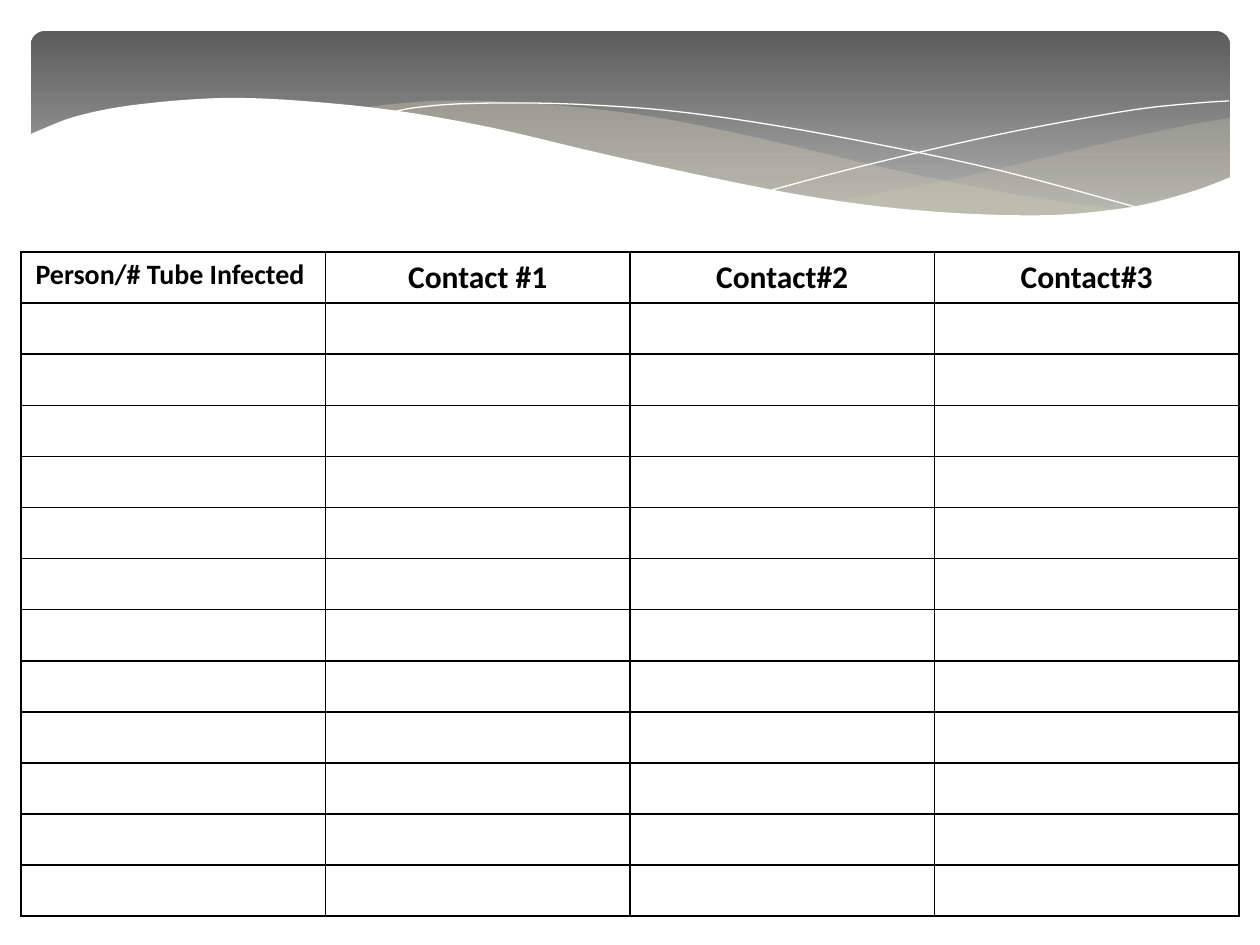
import dataclasses

import lxml.etree
import pptx
import pptx.dml.color
import pptx.enum.shapes
import pptx.enum.text
import pptx.oxml.ns
import pptx.util

EMU_PER_PX = 914400 / 126


@dataclasses.dataclass(frozen=True)
class Theme:
    font: str = "Calibri"
    text: str = "000000"
    border: str = "000000"
    paper: str = "FFFFFF"
    banner_top: str = "5C5C5C"
    banner_bottom: str = "AFAFAF"
    wave: str = "C8C8B1"
    first_header_size: int = 16
    header_size: int = 18
    border_width: int = 1


THEME = Theme()

HEADERS = ["Person/# Tube Infected ", "Contact #1", "Contact#2", "Contact#3"]
EMPTY_ROWS = 12

RIGHT_WAVE_TOP = [(833, 202), (890, 191), (949, 180), (1014, 165), (1085, 148),
                  (1123, 139), (1160, 131), (1194, 124), (1230, 118)]
RIGHT_WAVE_BOTTOM = [(1230, 178), (1196, 191), (1160, 202), (1120, 209), (1076, 214),
                     (1026, 217), (969, 215), (906, 210), (833, 202)]
LONG_WAVE_TOP = [(360, 108), (394, 104), (433, 101), (479, 101), (529, 103),
                 (586, 108), (648, 116), (717, 129), (793, 146), (890, 169),
                 (976, 187), (1055, 201), (1125, 210)]
LONG_WAVE_BOTTOM = [(1125, 210), (1080, 216), (1031, 218), (974, 217), (910, 212),
                    (838, 203), (757, 189), (668, 170), (566, 146), (483, 127),
                    (407, 114), (360, 108)]
FALLING_LINE = [(389, 113), (413, 108), (457, 104), (524, 103), (591, 105),
                (672, 111), (766, 124), (876, 144), (1002, 171), (1143, 209)]
RISING_LINE = [(772, 190), (847, 170), (942, 147), (1016, 131), (1091, 117),
               (1147, 108), (1198, 103), (1229, 101)]
PAPER_EDGE = [(29, 135), (45, 128), (74, 117), (120, 107), (184, 100), (243, 98),
              (315, 102), (398, 111), (493, 128), (599, 153), (699, 175), (789, 193),
              (867, 205), (938, 212), (1000, 215), (1055, 215), (1103, 211),
              (1147, 204), (1197, 190), (1231, 177)]


def px(n):
    return round(n * EMU_PER_PX)


def rgb(color):
    return pptx.dml.color.RGBColor.from_string(color)


def smooth_curve(points, steps=5):
    """Return points along a Catmull-Rom spline through the given points."""
    padded = [points[0], *points, points[-1]]
    curve = [points[0]]
    for a, b, c, d in zip(padded, padded[1:], padded[2:], padded[3:]):
        for step in range(1, steps + 1):
            t = step / steps
            curve.append(tuple(
                (2 * q + (r - p) * t + (2 * p - 5 * q + 4 * r - s) * t ** 2
                 + (3 * q - p - 3 * r + s) * t ** 3) / 2
                for p, q, r, s in zip(a, b, c, d)))
    return curve


def add_outline(slide, points, closed):
    emu = [(px(x), px(y)) for x, y in points]
    builder = slide.shapes.build_freeform(*emu[0])
    builder.add_line_segments(emu[1:], close=closed)
    sp = builder.convert_to_shape()
    sp.shadow.inherit = False
    return sp


def add_area(slide, points, color, opacity=100):
    sp = add_outline(slide, points, closed=True)
    sp.line.fill.background()
    sp.fill.solid()
    sp.fill.fore_color.rgb = rgb(color)
    if opacity < 100:
        clr = sp.fill._xPr.find(".//" + pptx.oxml.ns.qn("a:srgbClr"))
        lxml.etree.SubElement(clr, pptx.oxml.ns.qn("a:alpha"), val=str(opacity * 1000))


def add_hairline(slide, points):
    sp = add_outline(slide, smooth_curve(points), closed=False)
    sp.fill.background()
    sp.line.color.rgb = rgb(THEME.paper)
    sp.line.width = 0


def add_banner(slide):
    sp = slide.shapes.add_shape(pptx.enum.shapes.MSO_SHAPE.ROUNDED_RECTANGLE,
                                px(31), px(31), px(1199), px(197))
    sp.adjustments[0] = 0.07
    sp.shadow.inherit = False
    sp.line.fill.background()
    sp.fill.gradient()
    sp.fill.gradient_angle = 270
    stops = [(0, THEME.banner_top), (0.9, THEME.banner_bottom)]
    for stop, (position, color) in zip(sp.fill.gradient_stops, stops):
        stop.position = position
        stop.color.rgb = rgb(color)


def set_text(tf, text, *, size, bold=False, color=THEME.text,
             align=pptx.enum.text.PP_ALIGN.CENTER):
    p = tf.paragraphs[0]
    p.alignment = align
    r = p.add_run()
    r.text = text
    r.font.name = THEME.font
    r.font.size = pptx.util.Pt(size)
    r.font.bold = bold
    r.font.color.rgb = rgb(color)


def set_borders(cell):
    qn = pptx.oxml.ns.qn
    width = str(pptx.util.Pt(THEME.border_width))
    tc_pr = cell._tc.get_or_add_tcPr()
    for side in ("L", "R", "T", "B"):
        ln = lxml.etree.SubElement(tc_pr, qn("a:ln" + side), w=width)
        fill = lxml.etree.SubElement(ln, qn("a:solidFill"))
        lxml.etree.SubElement(fill, qn("a:srgbClr"), val=THEME.border)


def add_contact_table(slide):
    rows = EMPTY_ROWS + 1
    table = slide.shapes.add_table(rows, len(HEADERS), px(21), px(252),
                                   px(1218), px(51 * rows)).table
    table.first_row = False
    table.horz_banding = False
    for cell in table.iter_cells():
        set_borders(cell)
        cell.fill.background()
    for col, header in enumerate(HEADERS):
        size = THEME.header_size if col else THEME.first_header_size
        set_text(table.cell(0, col).text_frame, header, size=size, bold=True)


def main():
    prs = pptx.Presentation()
    prs.slide_width, prs.slide_height = px(1260), px(945)
    slide = prs.slides.add_slide(prs.slide_layouts[6])

    add_banner(slide)
    add_area(slide, smooth_curve(RIGHT_WAVE_TOP) + smooth_curve(RIGHT_WAVE_BOTTOM),
             THEME.wave, opacity=29)
    add_area(slide, smooth_curve(LONG_WAVE_TOP) + smooth_curve(LONG_WAVE_BOTTOM),
             THEME.wave, opacity=40)
    add_hairline(slide, FALLING_LINE)
    add_hairline(slide, RISING_LINE)
    add_area(slide, smooth_curve(PAPER_EDGE) + [(1231, 282), (29, 282)], THEME.paper)
    add_contact_table(slide)

    prs.save("out.pptx")


if __name__ == "__main__":
    main()
